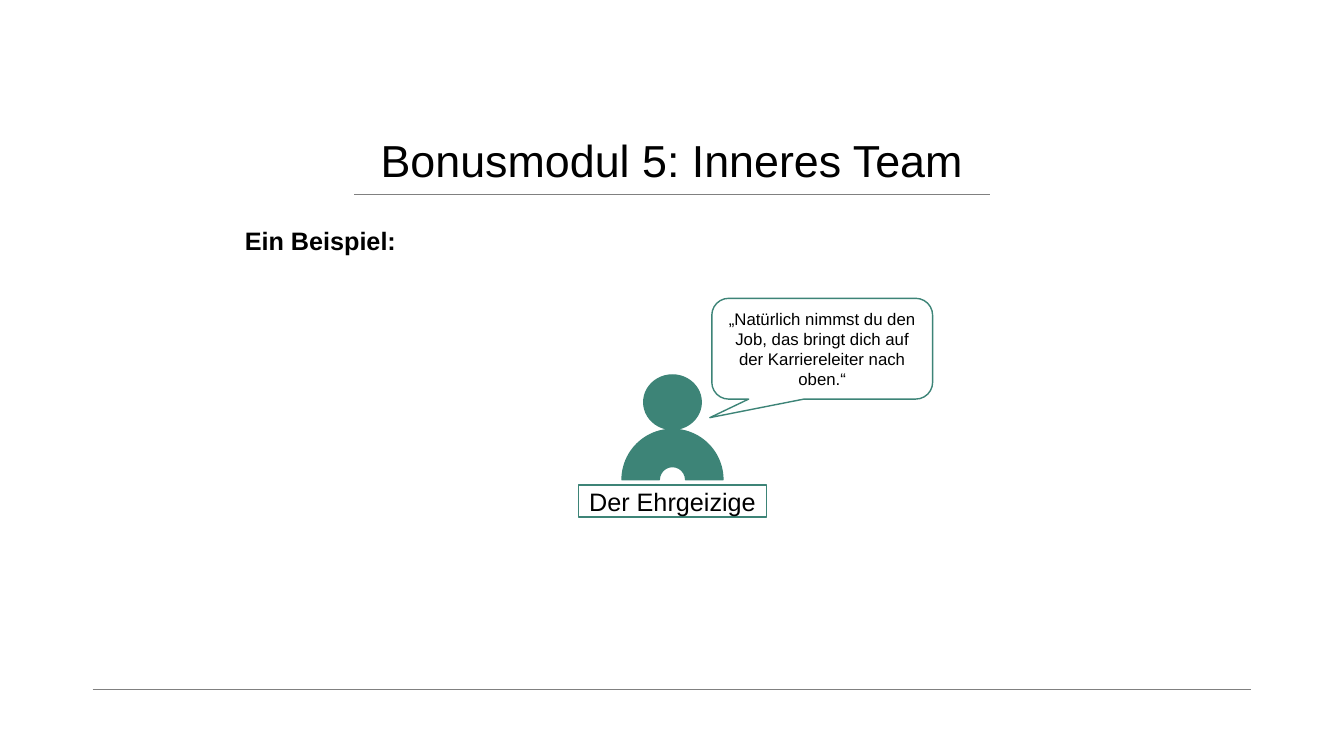
from lxml import etree
from pptx import Presentation
from pptx.dml.color import RGBColor
from pptx.enum.shapes import MSO_CONNECTOR, MSO_SHAPE
from pptx.enum.text import MSO_ANCHOR, PP_ALIGN
from pptx.oxml.ns import qn
from pptx.util import Inches, Pt

WIDTH, HEIGHT = 13.33, 7.5
FONT = "Arial"
GREEN, WHITE, BLACK, GREY = "3D8477", "FFFFFF", "000000", "808080"
STRAIGHT = MSO_CONNECTOR.STRAIGHT
OVAL, BLOCK_ARC = MSO_SHAPE.OVAL, MSO_SHAPE.BLOCK_ARC
PROCESS, CALLOUT = MSO_SHAPE.FLOWCHART_PROCESS, MSO_SHAPE.ROUNDED_RECTANGULAR_CALLOUT
TOP, MIDDLE = MSO_ANCHOR.TOP, MSO_ANCHOR.MIDDLE
LEFT, CENTER = PP_ALIGN.LEFT, PP_ALIGN.CENTER


def color(hex_value):
    return RGBColor.from_string(hex_value)


def write(shape, text, size, align=CENTER, anchor=MIDDLE, bold=False):
    frame = shape.text_frame
    frame.word_wrap = True
    frame.vertical_anchor = anchor
    frame.text = text
    paragraph = frame.paragraphs[0]
    paragraph.alignment = align
    font = paragraph.runs[0].font
    font.name, font.size, font.bold = FONT, Pt(size), bold
    font.color.rgb = color(BLACK)
    return paragraph


def add_text(slide, box, text, size, **style):
    shape = slide.shapes.add_textbox(*map(Inches, box))
    return shape, write(shape, text, size, **style)


def add_outlined(slide, kind, box, fill, adjustments=()):
    shape = slide.shapes.add_shape(kind, *map(Inches, box))
    shape.shadow.inherit = False
    shape.fill.solid()
    shape.fill.fore_color.rgb = color(fill)
    shape.line.color.rgb = color(GREEN)
    shape.line.width = Pt(1)
    for index, value in enumerate(adjustments):
        shape.adjustments[index] = value
    return shape


def add_rule(slide, left, right, y):
    rule = slide.shapes.add_connector(
        STRAIGHT, Inches(left), Inches(y), Inches(right), Inches(y))
    rule.line.color.rgb = color(GREY)
    rule.line.width = Pt(0.25)
    etree.SubElement(rule._element.spPr, qn("a:effectLst"))


def add_heading(slide, box, text):
    left, top, width, height = box
    shape, paragraph = add_text(slide, box, text, 32, anchor=TOP)
    shape.text_frame.margin_top = Inches(0.08)
    shape.text_frame.margin_bottom = 0
    paragraph.line_spacing = 0.9
    center, half_rule = left + width / 2, 3.15
    add_rule(slide, center - half_rule, center + half_rule, top + 0.63)


def add_team_member(slide, box, name, quote):
    """Figure with head, name plate and body, plus its speech bubble."""
    left, top, width, height = box
    center = left + width / 2
    head_width, head_height, body = 0.57, 0.54, 1
    plate_height = 0.32

    # Figure and name plate
    add_outlined(slide, OVAL, (center - head_width / 2, top, head_width, head_height), GREEN)
    plate = add_outlined(
        slide, PROCESS, (left, top + height - plate_height, width, plate_height), WHITE)
    write(plate, name, 18)
    add_outlined(slide, BLOCK_ARC, (center - body / 2, top + head_height, body, body),
                 GREEN, (108, 0, 0.369))

    # Speech bubble
    bubble = add_outlined(slide, CALLOUT, (center + 0.39, top - 0.76, 2.19, 1),
                          WHITE, (-0.509, 0.684, 0.167))
    write(bubble, quote, 12)


def main():
    presentation = Presentation()
    presentation.slide_width = Inches(WIDTH)
    presentation.slide_height = Inches(HEIGHT)
    slide = presentation.slides.add_slide(presentation.slide_layouts[6])

    # Footer rule and heading
    add_rule(slide, 0.92, WIDTH - 0.92, 6.84)
    add_heading(slide, (2.24, 1.3, 8.85, 0.46), "Bonusmodul 5: Inneres Team")

    # Example
    add_team_member(
        slide, (5.74, 3.72, 1.86, 1.41), "Der Ehrgeizige",
        "„Natürlich nimmst du den Job, das bringt dich auf der Karriereleiter nach oben.“")
    add_text(slide, (2.33, 2.19, 2.6, 0.4), "Ein Beispiel:", 18,
             align=LEFT, anchor=TOP, bold=True)

    presentation.save("out.pptx")


if __name__ == "__main__":
    main()
